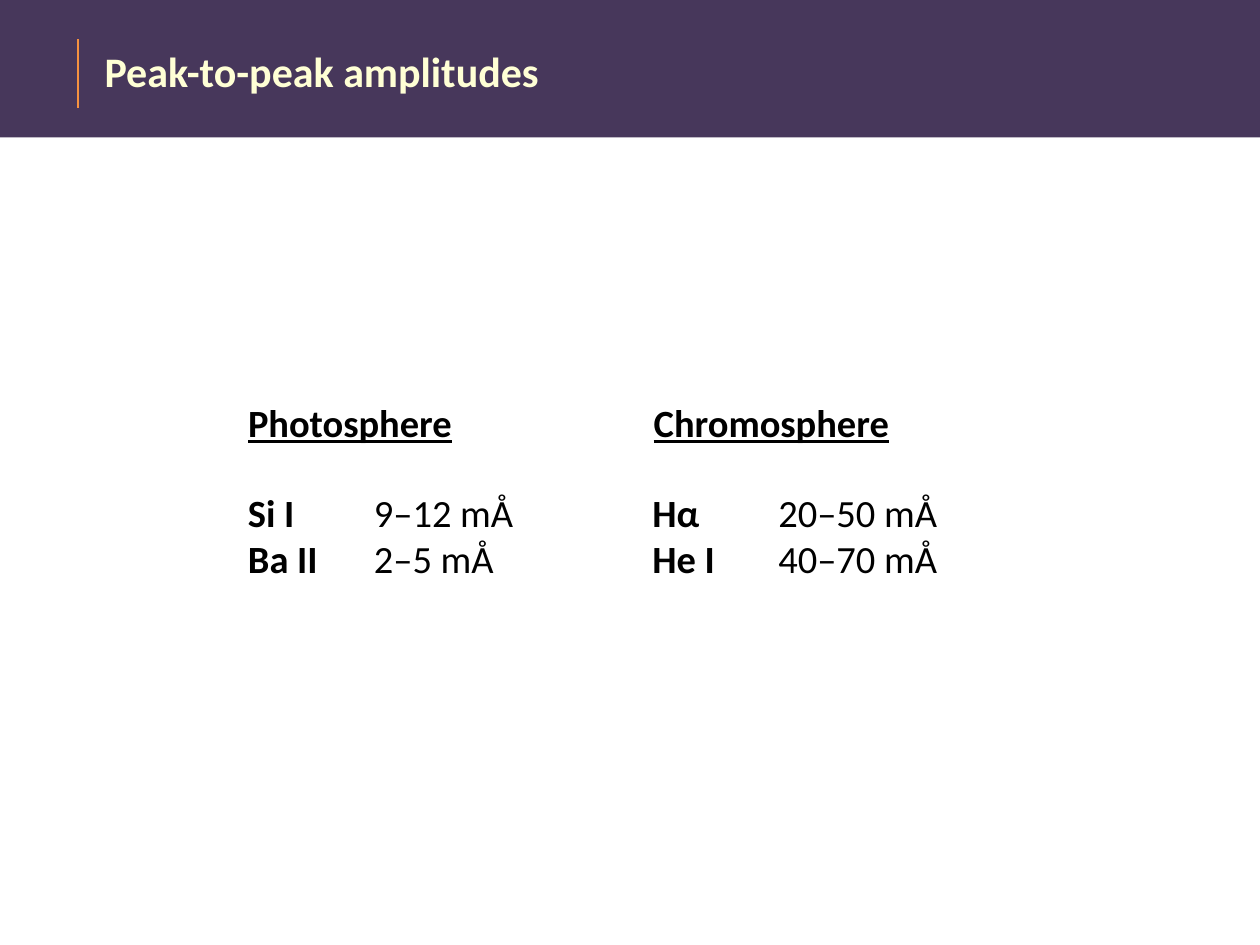
from dataclasses import dataclass

from lxml.etree import SubElement
from pptx import Presentation
from pptx.dml.color import RGBColor
from pptx.enum.shapes import MSO_CONNECTOR, MSO_SHAPE
from pptx.enum.text import MSO_ANCHOR, PP_ALIGN
from pptx.oxml.ns import qn
from pptx.util import Inches, Pt

COLUMNS, ROWS = 100, 75


@dataclass(frozen=True)
class Theme:
    font: str = "Calibri"
    band: str = "47375B"
    accent: str = "F69240"
    title: str = "FFFFD5"
    ink: str = "000000"
    title_size: int = 24
    body_size: int = 22
    rule_width: float = 1.5


def add_text(para, text, *, font, size, color, bold=False, underline=False):
    span = para.add_run()
    span.text = text
    span.font.name = font
    span.font.size = Pt(size)
    span.font.bold = bold
    span.font.underline = underline
    span.font.color.rgb = RGBColor.from_string(color)


class SlideBuilder:
    def __init__(self, deck, theme):
        self.deck = deck
        self.theme = theme
        self.page = deck.slides.add_slide(deck.slide_layouts[5])

    def place(self, column, row, width, height):
        across = self.deck.slide_width / COLUMNS
        down = self.deck.slide_height / ROWS
        return (round(column * across), round(row * down),
                round(width * across), round(height * down))

    def band(self, *area):
        band = self.page.shapes.add_shape(MSO_SHAPE.RECTANGLE, *self.place(*area))
        band.shadow.inherit = False
        band.fill.solid()
        band.fill.fore_color.rgb = RGBColor.from_string(self.theme.band)
        band.line.fill.background()
        self.page.shapes.title._element.addprevious(band._element)

    def rule(self, column, top, bottom):
        left, start, _, length = self.place(column, top, 0, bottom - top)
        rule = self.page.shapes.add_connector(
            MSO_CONNECTOR.STRAIGHT, left, start, left, start + length)
        rule.line.color.rgb = RGBColor.from_string(self.theme.accent)
        rule.line.width = Pt(self.theme.rule_width)
        SubElement(rule._element.spPr, qn("a:effectLst"))

    def title(self, text, *area):
        box = self.page.shapes.title
        box.left, box.top, box.width, box.height = self.place(*area)
        box.text_frame.word_wrap = False
        box.text_frame.vertical_anchor = MSO_ANCHOR.TOP
        para = box.text_frame.paragraphs[0]
        para.alignment = PP_ALIGN.LEFT
        add_text(para, text, font=self.theme.font, size=self.theme.title_size,
                 color=self.theme.title, bold=True)

    def text_box(self, *area):
        box = self.page.shapes.add_textbox(*self.place(*area))
        box.text_frame.word_wrap = True
        return box.text_frame

    def body_text(self, para, text, **style):
        add_text(para, text, font=self.theme.font, size=self.theme.body_size,
                 color=self.theme.ink, **style)

    def heading(self, text, *area):
        frame = self.text_box(*area)
        self.body_text(frame.paragraphs[0], text, bold=True, underline=True)

    def amplitudes(self, entries, *area):
        frame = self.text_box(*area)
        for index, (spectral_line, amplitude) in enumerate(entries):
            para = frame.add_paragraph() if index else frame.paragraphs[0]
            tabs = SubElement(para._element.get_or_add_pPr(), qn("a:tabLst"))
            SubElement(tabs, qn("a:tab"), pos=str(Inches(1)), algn="l")
            self.body_text(para, f"{spectral_line}\t", bold=True)
            self.body_text(para, amplitude)


def main():
    deck = Presentation()
    deck.slide_width, deck.slide_height = Inches(10), Inches(7.5)
    slide = SlideBuilder(deck, Theme())

    slide.band(0, 0, COLUMNS, 10.9)
    slide.rule(6.2, 3.1, 8.6)
    slide.title("Peak-to-peak amplitudes", 7.3, 3.1, 37, 5)

    layers = [
        ("Photosphere", 18.7, 18.7, 21.9,
         [("Si I", "9–12 mÅ"), ("Ba II", "2–5 mÅ")]),
        ("Chromosphere", 50.9, 50.8, 23.3,
         [("Hα", "20–50 mÅ"), ("He I", "40–70 mÅ")]),
    ]
    for name, heading_column, column, heading_width, entries in layers:
        slide.amplitudes(entries, column, 38.3, 29.7, 8.4)
        slide.heading(name, heading_column, 31.2, heading_width, 4.7)

    deck.save("out.pptx")


if __name__ == "__main__":
    main()
